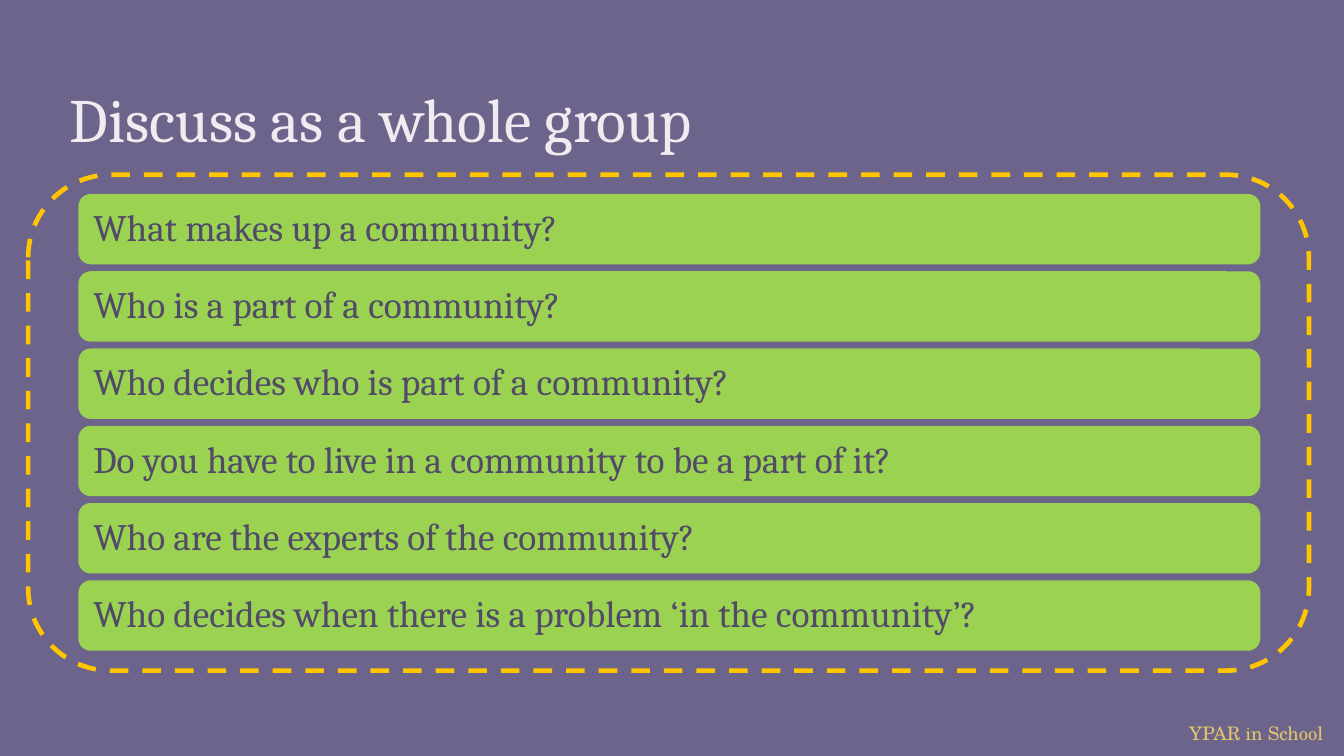
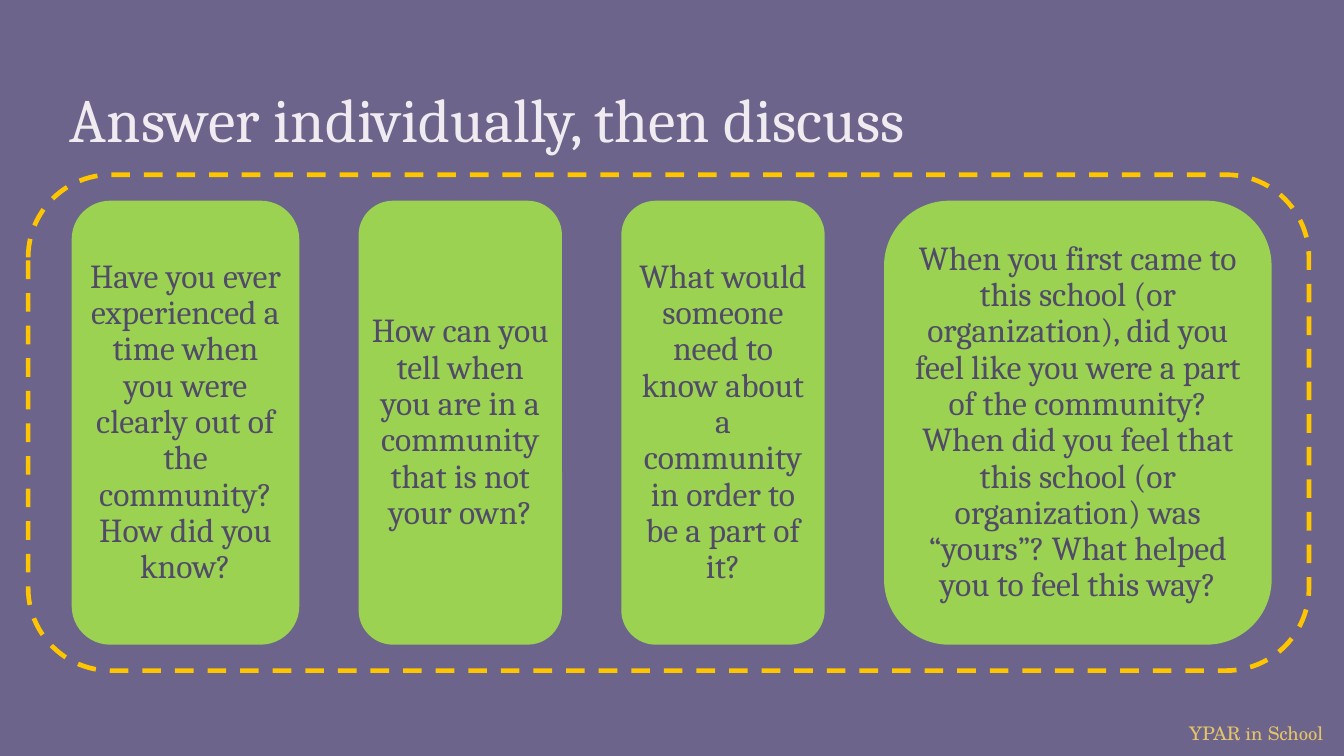
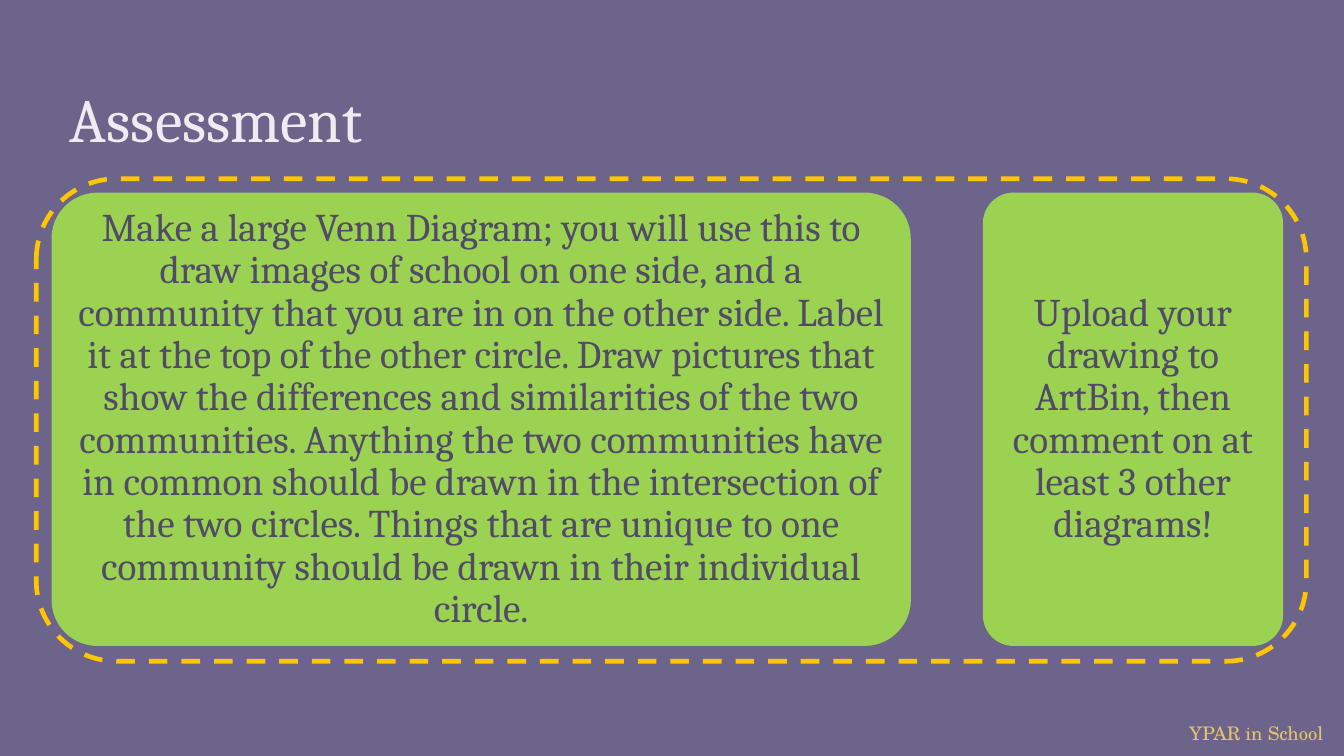
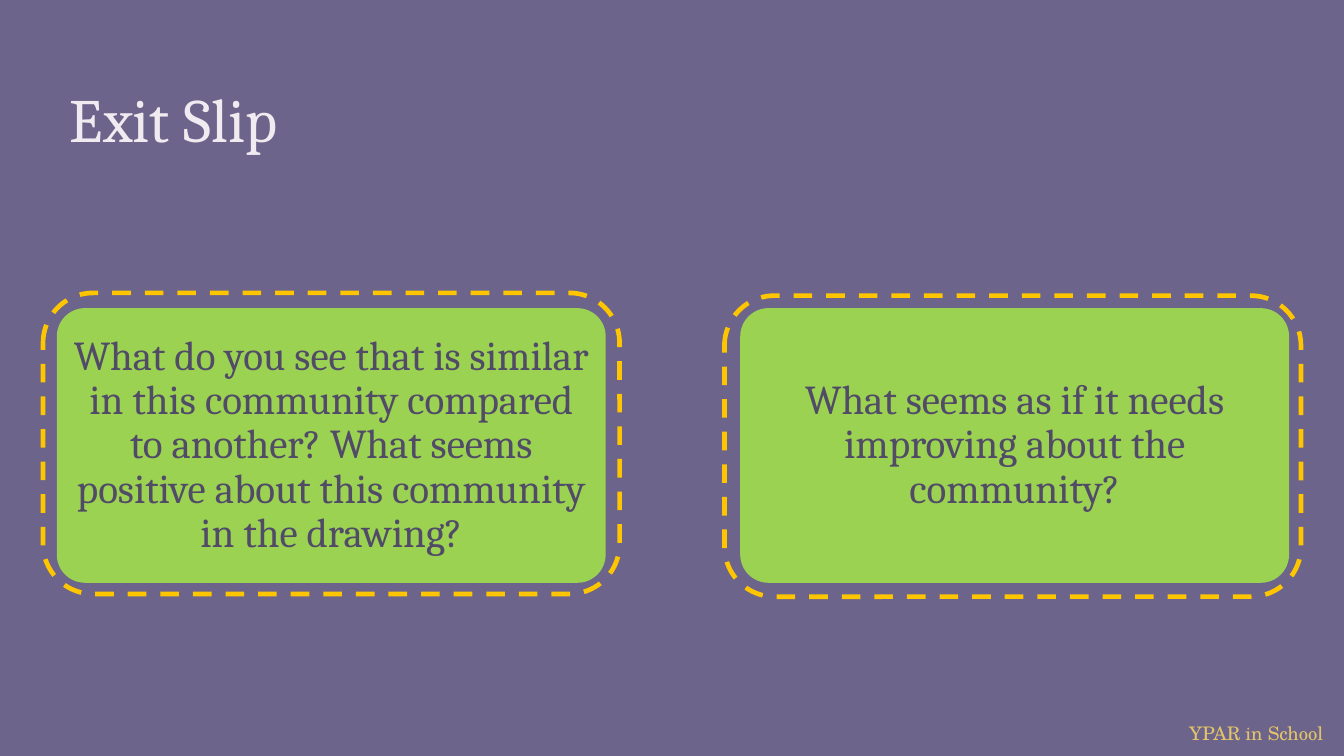
from dataclasses import dataclass
from typing import Any

import pptx
import pptx.dml.color
import pptx.enum.dml
import pptx.enum.shapes
import pptx.enum.text
import pptx.presentation
import pptx.shapes.autoshape
import pptx.slide
import pptx.util

Align = pptx.enum.text.PP_ALIGN
Anchor = pptx.enum.text.MSO_ANCHOR

EMU_PER_PX = 914400 // 200
SLIDE_WIDTH, SLIDE_HEIGHT = 2000, 1125
TITLE_ONLY_LAYOUT = 5

PURPLE, GREEN, YELLOW = "6C648B", "9BD252", "FFC600"
INK, PALE, GOLD = "514B68", "F0EBF0", "E4C469"
BODY_FONT, FOOTER_FONT = "Cambria", "TeX Gyre Schola"
FOOTER_TEXT = "YPAR in School"


@dataclass(frozen=True)
class Box:
    left: int
    top: int
    width: int
    height: int


@dataclass(frozen=True)
class TextStyle:
    size: int
    color: str
    font: str = BODY_FONT
    align: Any = Align.LEFT
    anchor: Any = Anchor.MIDDLE
    inset_x: int = 20
    inset_y: int = 20
    line_spacing: float = 1.0
    wrap: bool = True


@dataclass(frozen=True)
class Card:
    box: Box
    text: str


@dataclass(frozen=True)
class Page:
    title: str
    cards: list[Card]
    style: TextStyle
    frames: list[Box]
    corner: float | None = None


TITLE_BOX = Box(84, 100, 1830, 150)
TITLE_STYLE = TextStyle(33, PALE, anchor=Anchor.BOTTOM)
FOOTER_BOX = Box(1750, 1064, 250, 54)
FOOTER_STYLE = TextStyle(10, GOLD, FOOTER_FONT, anchor=Anchor.TOP, inset_y=10, wrap=False)
WIDE_FRAME = Box(42, 260, 1906, 738)


def px(length: int) -> pptx.util.Emu:
    return pptx.util.Emu(length * EMU_PER_PX)


def rgb(color: str) -> pptx.dml.color.RGBColor:
    return pptx.dml.color.RGBColor.from_string(color)


def place(box: Box) -> tuple[pptx.util.Emu, ...]:
    return px(box.left), px(box.top), px(box.width), px(box.height)


def set_all(target: Any, values: dict[str, Any]) -> None:
    for name, value in values.items():
        setattr(target, name, value)


def column_of_cards(first: Box, pitch: int, texts: list[str]) -> list[Card]:
    return [
        Card(Box(first.left, first.top + row * pitch, first.width, first.height), text)
        for row, text in enumerate(texts)
    ]


def row_of_cards(left: int, top: int, height: int, gap: int,
                 columns: list[tuple[int, str]]) -> list[Card]:
    """Set cards of the given (width, text) side by side with equal gaps."""
    cards = []
    for width, text in columns:
        cards.append(Card(Box(left, top, width, height), text))
        left += width + gap
    return cards


def write(shape: Any, text: str, style: TextStyle) -> None:
    frame = shape.text_frame
    frame.text = text
    set_all(frame, {
        "auto_size": pptx.enum.text.MSO_AUTO_SIZE.NONE,
        "word_wrap": style.wrap,
        "vertical_anchor": style.anchor,
        "margin_left": px(style.inset_x),
        "margin_right": px(style.inset_x),
        "margin_top": px(style.inset_y),
        "margin_bottom": px(style.inset_y),
    })
    paragraph = frame.paragraphs[0]
    set_all(paragraph, {"alignment": style.align, "line_spacing": style.line_spacing})
    set_all(paragraph.font, {"name": style.font, "size": pptx.util.Pt(style.size)})
    paragraph.font.color.rgb = rgb(style.color)


def add_rounded(slide: pptx.slide.Slide, box: Box, line: str, line_width: float,
                corner: float | None = None) -> pptx.shapes.autoshape.Shape:
    kind = pptx.enum.shapes.MSO_SHAPE.ROUNDED_RECTANGLE
    shape = slide.shapes.add_shape(kind, *place(box))
    shape.shadow.inherit = False
    shape.line.color.rgb = rgb(line)
    shape.line.width = pptx.util.Pt(line_width)
    if corner is not None:
        shape.adjustments[0] = corner
    return shape


def add_card(slide: pptx.slide.Slide, card: Card, page: Page) -> None:
    shape = add_rounded(slide, card.box, GREEN, 1, page.corner)
    shape.fill.solid()
    shape.fill.fore_color.rgb = rgb(GREEN)
    write(shape, card.text, page.style)


def add_dashed_frame(slide: pptx.slide.Slide, box: Box) -> None:
    shape = add_rounded(slide, box, YELLOW, 2.5)
    shape.fill.background()
    shape.line.dash_style = pptx.enum.dml.MSO_LINE.DASH


def add_page(presentation: pptx.presentation.Presentation, page: Page) -> None:
    slide = presentation.slides.add_slide(presentation.slide_layouts[TITLE_ONLY_LAYOUT])
    write(slide.shapes.add_textbox(*place(FOOTER_BOX)), FOOTER_TEXT, FOOTER_STYLE)
    title = slide.shapes.title
    set_all(title, dict(zip(("left", "top", "width", "height"), place(TITLE_BOX))))
    write(title, page.title, TITLE_STYLE)
    for card in page.cards:
        add_card(slide, card, page)
    for frame in page.frames:
        add_dashed_frame(slide, frame)


def centred(size: int, inset_x: int, inset_y: int) -> TextStyle:
    return TextStyle(size, INK, align=Align.CENTER, inset_x=inset_x, inset_y=inset_y,
                     line_spacing=0.9)


PAGES = [
    Page(
        "Discuss as a whole group",
        column_of_cards(Box(118, 290, 1756, 102), 115, [
            "What makes up a community?",
            "Who is a part of a community?",
            "Who decides who is part of a community?",
            "Do you have to live in a community to be a part of it?",
            "Who are the experts of the community?",
            "Who decides when there is a problem ‘in the community’?",
        ]),
        TextStyle(20, INK, inset_x=16, inset_y=16, line_spacing=0.9),
        [WIDE_FRAME],
    ),
    Page(
        "Answer individually, then discuss",
        row_of_cards(108, 300, 658, 91, [
            (336, "Have you ever experienced a time when you were clearly out of "
                  "the community? How did you know?"),
            (300, "How can you tell when you are in a community that is not your own?"),
            (300, "What would someone need to know about a community in order to be "
                  "a part of it?"),
            (574, "When you first came to this school (or organization), did you feel "
                  "like you were a part of the community?\vWhen did you feel that this "
                  "school (or organization) was “yours”? What helped you to feel this way?"),
        ]),
        centred(18, 2, 2),
        [WIDE_FRAME],
    ),
    Page(
        "Assessment",
        row_of_cards(78, 288, 672, 110, [
            (1276, "Make a large Venn Diagram; you will use this to draw images of school "
                   "on one side, and a community that you are in on the other side. Label "
                   "it at the top of the other circle. Draw pictures that show the "
                   "differences and similarities of the two communities. Anything the two "
                   "communities have in common should be drawn in the intersection of the "
                   "two circles. Things that are unique to one community should be drawn "
                   "in their individual circle."),
            (444, "Upload your drawing to ArtBin, then comment on at least 3 other "
                  "diagrams!"),
        ]),
        centred(21, 8, 6),
        [Box(54, 266, 1890, 718)],
        corner=0.1,
    ),
    Page(
        "Exit Slip",
        row_of_cards(86, 460, 406, 203, [
            (814, "What do you see that is similar in this community compared to another? "
                  "What seems positive about this community in the drawing?"),
            (814, "What seems as if it needs improving about the community?"),
        ]),
        centred(22, 10, 6),
        [Box(64, 436, 858, 448), Box(1078, 440, 858, 448)],
        corner=0.1,
    ),
]


def main() -> None:
    presentation = pptx.Presentation()
    set_all(presentation, {"slide_width": px(SLIDE_WIDTH), "slide_height": px(SLIDE_HEIGHT)})
    background = presentation.slide_master.background.fill
    background.solid()
    background.fore_color.rgb = rgb(PURPLE)
    for page in PAGES:
        add_page(presentation, page)
    presentation.save("out.pptx")


if __name__ == "__main__":
    main()
